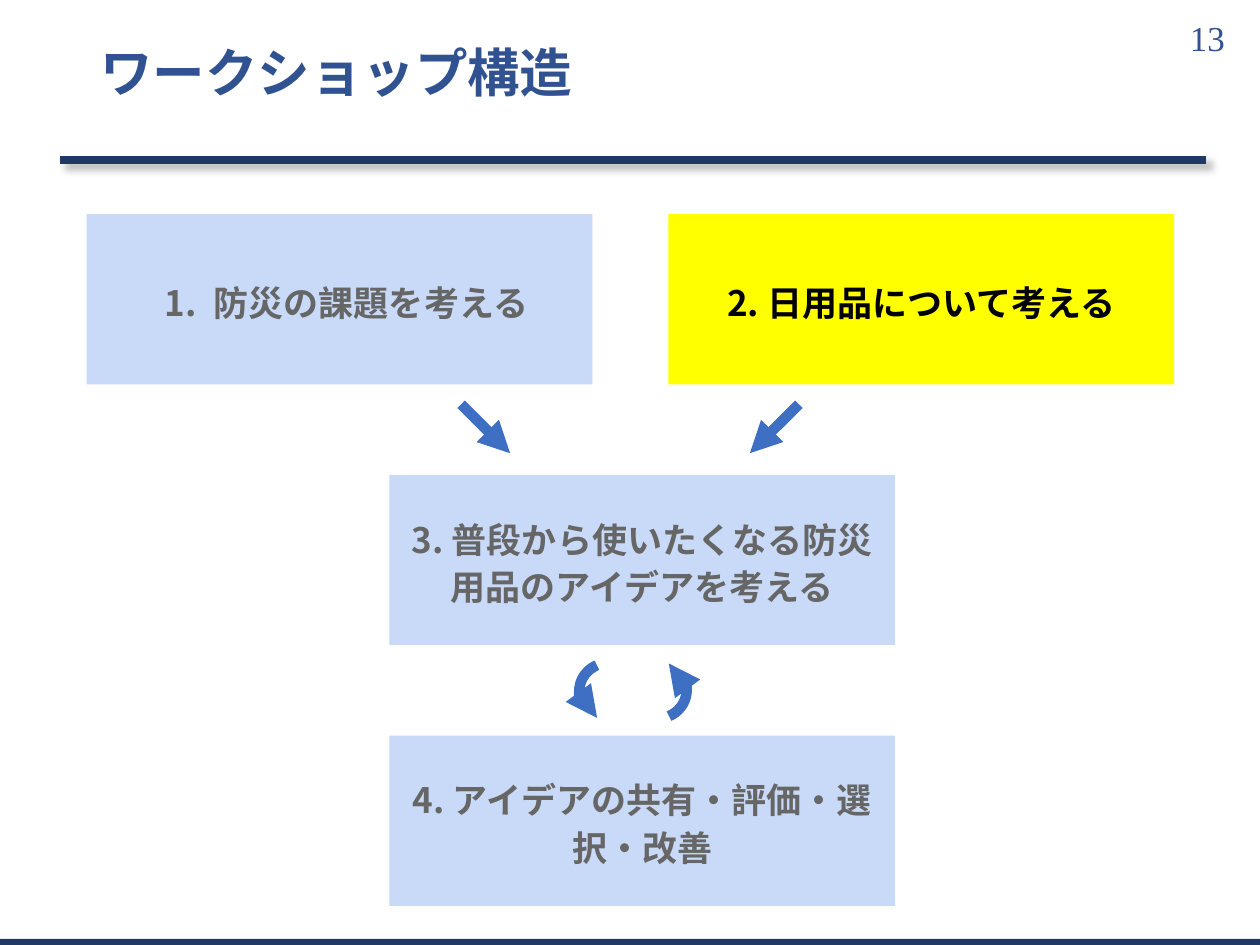
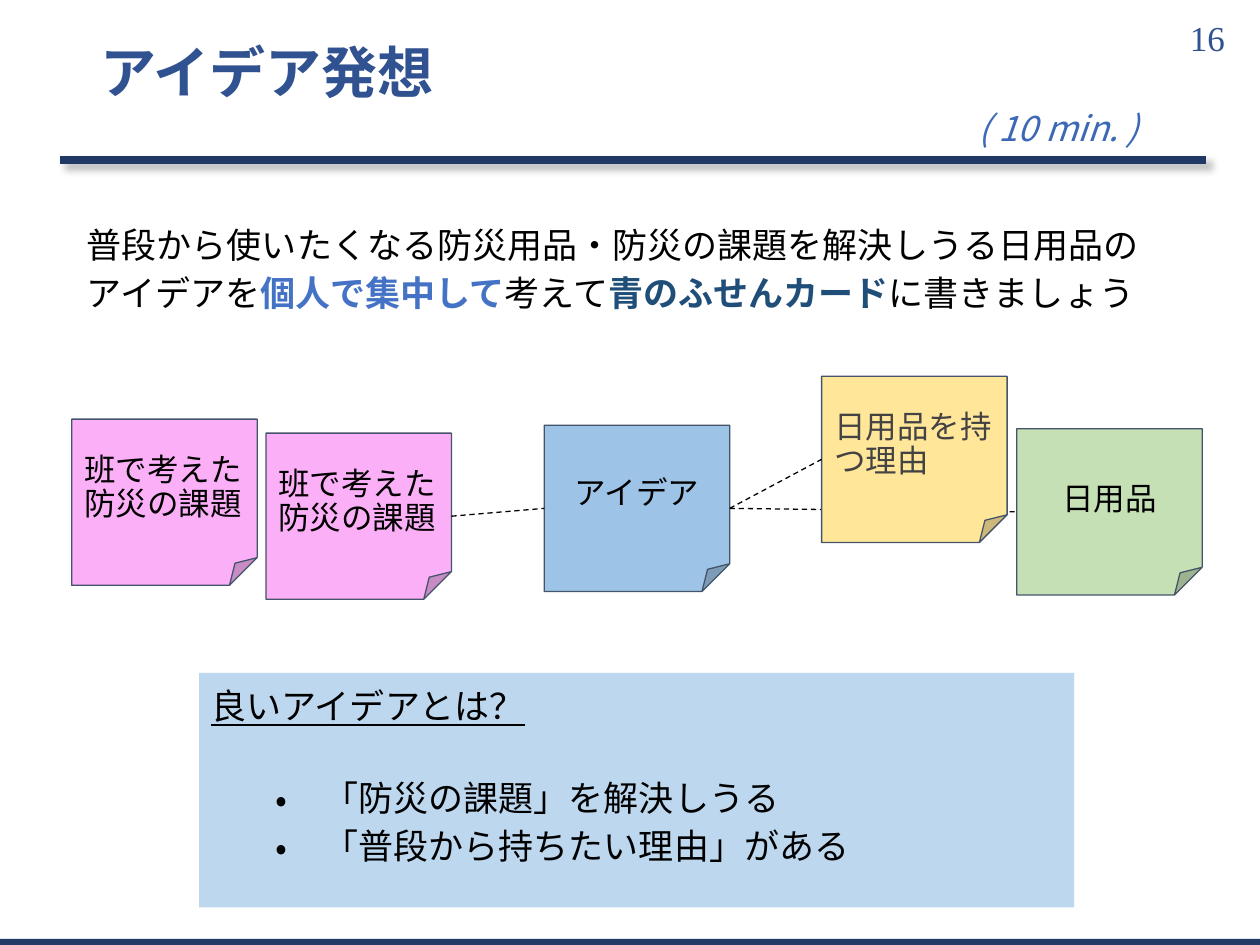
"""Builds two workshop slides: the workshop structure and the idea session."""
from lxml.etree import SubElement
from pptx import Presentation
from pptx.dml.color import RGBColor
from pptx.enum.dml import MSO_LINE
from pptx.enum.shapes import MSO_CONNECTOR, MSO_SHAPE as SHAPE
from pptx.enum.text import MSO_ANCHOR as ANCHOR, PP_ALIGN as ALIGN
from pptx.oxml.ns import qn
from pptx.util import Pt

COLOURS = {
    "title": "305290", "rule": "1F3864", "footer": "213964", "black": "000000",
    "step": "C9DAF8", "active": "FFFF00", "muted": "666666", "arrow": "3F6FC3",
    "time": "3C68B6", "focus": "4472C4", "blue_note": "1F4E79", "criteria": "BDD7EE",
    "issue": "FBAFF7", "reason": "FFE699", "reason_text": "434343", "item": "C5E0B4",
    "idea": "9DC3E6", "note_edge": "44546A",
}
SANS, SERIF = "Noto Sans CJK JP", "Times New Roman"
INSETS = (7.2, 3.6, 7.2, 3.6)
NOTE_WIDTH, NOTE_HEIGHT = 106, 95


def colour(name):
    return RGBColor.from_string(COLOURS[name])


class Deck:
    """Holds the shared style and the slide being drawn."""

    def __init__(self):
        self.show = Presentation()
        self.show.slide_width, self.show.slide_height = Pt(720), Pt(540)
        self.slide = None

    def new_slide(self, title, title_size, number):
        self.slide = self.show.slides.add_slide(self.show.slide_layouts[5])
        heading = self.slide.shapes.title
        place = {"left": 50, "top": 14, "width": 620, "height": 58}
        for name, value in place.items():
            setattr(heading, name, Pt(value))
        self.frame(heading, ANCHOR.MIDDLE, (7.2, 0, 7.2, 0))
        self.paragraph(heading, [(title, {"bold": True})], ink="title", size=title_size,
                       align=ALIGN.LEFT, line_spacing=0.9)
        self.text((663, 7, 44, 29), [(str(number), {})], ANCHOR.MIDDLE, ink="title",
                  face=SERIF, align=ALIGN.RIGHT)
        rule = self.line((34.5, 91.5), (689, 91.5), "rule", 5)
        effects = rule.element.spPr.find(qn("a:effectLst"))
        shadow = SubElement(effects, qn("a:outerShdw"), blurRad=str(Pt(4)), dist=str(Pt(4)),
                            dir="2700000", algn="tl", rotWithShape="0")
        black = SubElement(shadow, qn("a:srgbClr"), val=COLOURS["black"])
        SubElement(black, qn("a:alpha"), val="25000")
        self.shape(SHAPE.RECTANGLE, (0, 536.5, 720, 7), "footer")

    def frame(self, shape, anchor, insets=INSETS):
        frame = shape.text_frame
        frame.word_wrap, frame.vertical_anchor = True, anchor
        for side, inset in zip(("left", "top", "right", "bottom"), insets):
            setattr(frame, f"margin_{side}", Pt(inset))

    def paragraph(self, shape, runs, ink="black", size=20, face=SANS, bullet=None,
                  indent=(0, 0), **layout):
        frame = shape.text_frame
        paragraph = frame.add_paragraph() if frame.text else frame.paragraphs[0]
        if bullet:
            tag, attributes = bullet
            properties = paragraph._p.get_or_add_pPr()
            properties.set("marL", str(Pt(indent[0])))
            properties.set("indent", str(Pt(indent[1])))
            bullet_ink = SubElement(properties, qn("a:buClr"))
            SubElement(bullet_ink, qn("a:srgbClr"), val=COLOURS[ink])
            SubElement(properties, qn("a:buFont"), typeface=face)
            SubElement(properties, qn(tag), attributes)
        settings = {"alignment": layout.pop("align", ALIGN.LEFT), **layout}
        for name, value in settings.items():
            setattr(paragraph, name, value)
        for words, style in runs:
            style = {"name": face, "size": Pt(size), "bold": False, **style}
            run_ink = style.pop("ink", ink)
            run = paragraph.add_run()
            run.text = words
            for name, value in style.items():
                setattr(run.font, name, value)
            run.font.color.rgb = colour(run_ink)
            SubElement(run.font._element, qn("a:ea"), typeface=face)

    def text(self, box, runs, anchor=ANCHOR.TOP, **style):
        label = self.slide.shapes.add_textbox(*map(Pt, box))
        self.frame(label, anchor)
        self.paragraph(label, runs, **style)

    def shape(self, kind, box, fill=None, edge=None, edge_width=0.75):
        shape = self.slide.shapes.add_shape(kind, *map(Pt, box))
        shape.shadow.inherit = False
        if fill:
            shape.fill.solid()
            shape.fill.fore_color.rgb = colour(fill)
        else:
            shape.fill.background()
        if edge:
            shape.line.color.rgb = colour(edge)
            shape.line.width = Pt(edge_width)
        else:
            shape.line.fill.background()
        return shape

    def step(self, left, row, words, fill="step", ink="muted", **style):
        box = self.shape(SHAPE.RECTANGLE, (left, 122.4 + 149 * row, 289, 97.2), fill)
        self.frame(box, ANCHOR.MIDDLE)
        self.paragraph(box, [(words, {"bold": True})], ink=ink, align=ALIGN.CENTER,
                       line_spacing=1.14, **style)

    def note(self, corner, words, fill, **style):
        note = self.shape(SHAPE.FOLDED_CORNER, (*corner, NOTE_WIDTH, NOTE_HEIGHT), fill,
                          "note_edge")
        self.frame(note, ANCHOR.MIDDLE, (7.2,) * 4)
        self.paragraph(note, [(words, {})], size=18, **{"line_spacing": 0.9, **style})

    def line(self, start, end, ink, width, dash=None):
        line = self.slide.shapes.add_connector(MSO_CONNECTOR.STRAIGHT, *map(Pt, start + end))
        line.line.color.rgb = colour(ink)
        line.line.width = Pt(width)
        if dash:
            line.line.dash_style = dash
        SubElement(line.element.spPr, qn("a:effectLst"))
        return line

    def arrowhead(self, shape):
        SubElement(shape.element.spPr.find(qn("a:ln")), qn("a:tailEnd"), type="triangle")

    def arrow(self, start, end):
        self.arrowhead(self.line(start, end, "arrow", 6))

    def cycle_arrow(self, corner, flip):
        arc = self.shape(SHAPE.ARC, (*corner, 32.4, 32.4), edge="arrow", edge_width=6)
        arc.adjustments[0], arc.adjustments[1] = 175.238, 41.025
        arc.element.spPr.find(qn("a:xfrm")).set(flip, "1")
        self.arrowhead(arc)

    def thread(self, source, target):
        middle = NOTE_HEIGHT / 2
        self.line((source[0] + NOTE_WIDTH, source[1] + middle),
                  (target[0], target[1] + middle), "black", 0.75, MSO_LINE.DASH)


def draw_structure(deck):
    deck.new_slide("ワークショップ構造", 30, 13)
    deck.step(382, 0, "2. 日用品について考える", "active", "black")
    deck.step(222.5, 1, "3. 普段から使いたくなる防災用品のアイデアを考える")
    deck.step(49.5, 0, "防災の課題を考える", indent=(36, -28),
              bullet=("a:buAutoNum", {"type": "arabicPeriod"}))
    deck.step(222.5, 2, "4. アイデアの共有・評価・選択・改善")
    for start, end in ((263.5, 291.5), (456.5, 428.5)):
        deck.arrow((start, 231), (end, 259))
    deck.cycle_arrow((331, 379), "flipH")
    deck.cycle_arrow((360, 378), "flipV")


def draw_ideas(deck):
    deck.new_slide("アイデア発想", 32, 16)
    first_issue, second_issue, idea = (41, 239.5), (152, 247.5), (311, 243)
    reason, item = (469.5, 215), (581, 245)
    deck.thread(idea, item)
    deck.text((42.5, 121, 621, 75), [
        ("普段から使いたくなる防災用品・防災の課題を解決しうる日用品のアイデアを", {}),
        ("個人で集中して", {"ink": "focus", "bold": True}),
        ("考えて", {}),
        ("青のふせんカード", {"ink": "blue_note", "bold": True}),
        ("に書きましょう", {}),
    ], line_spacing=1.14)
    deck.text((62.5, 60, 595, 32), [("( 10 min. )", {"italic": True})], ink="time",
              align=ALIGN.RIGHT, line_spacing=0.9)

    criteria = deck.shape(SHAPE.RECTANGLE, (113.75, 384.5, 500, 134), "criteria")
    deck.frame(criteria, ANCHOR.TOP)
    deck.paragraph(criteria, [("良いアイデアとは？", {"underline": True})], line_spacing=1.14)
    for words, gap in (("「防災の課題」を解決しうる", 25), ("「普段から持ちたい理由」がある", 0)):
        deck.paragraph(criteria, [(words, {})], bullet=("a:buChar", {"char": "•"}),
                       indent=(64, -27.4), line_spacing=1.14, space_before=Pt(gap))

    for corner in (first_issue, second_issue):
        deck.note(corner, "班で考えた防災の課題", "issue")
    deck.note(reason, "日用品を持つ理由", "reason", ink="reason_text")
    deck.note(item, "日用品", "item", align=ALIGN.CENTER, line_spacing=1.0)
    deck.note(idea, "アイデア", "idea", align=ALIGN.CENTER)
    deck.thread(second_issue, idea)
    deck.thread(idea, reason)


def main():
    deck = Deck()
    draw_structure(deck)
    draw_ideas(deck)
    deck.show.save("out.pptx")


if __name__ == "__main__":
    main()
